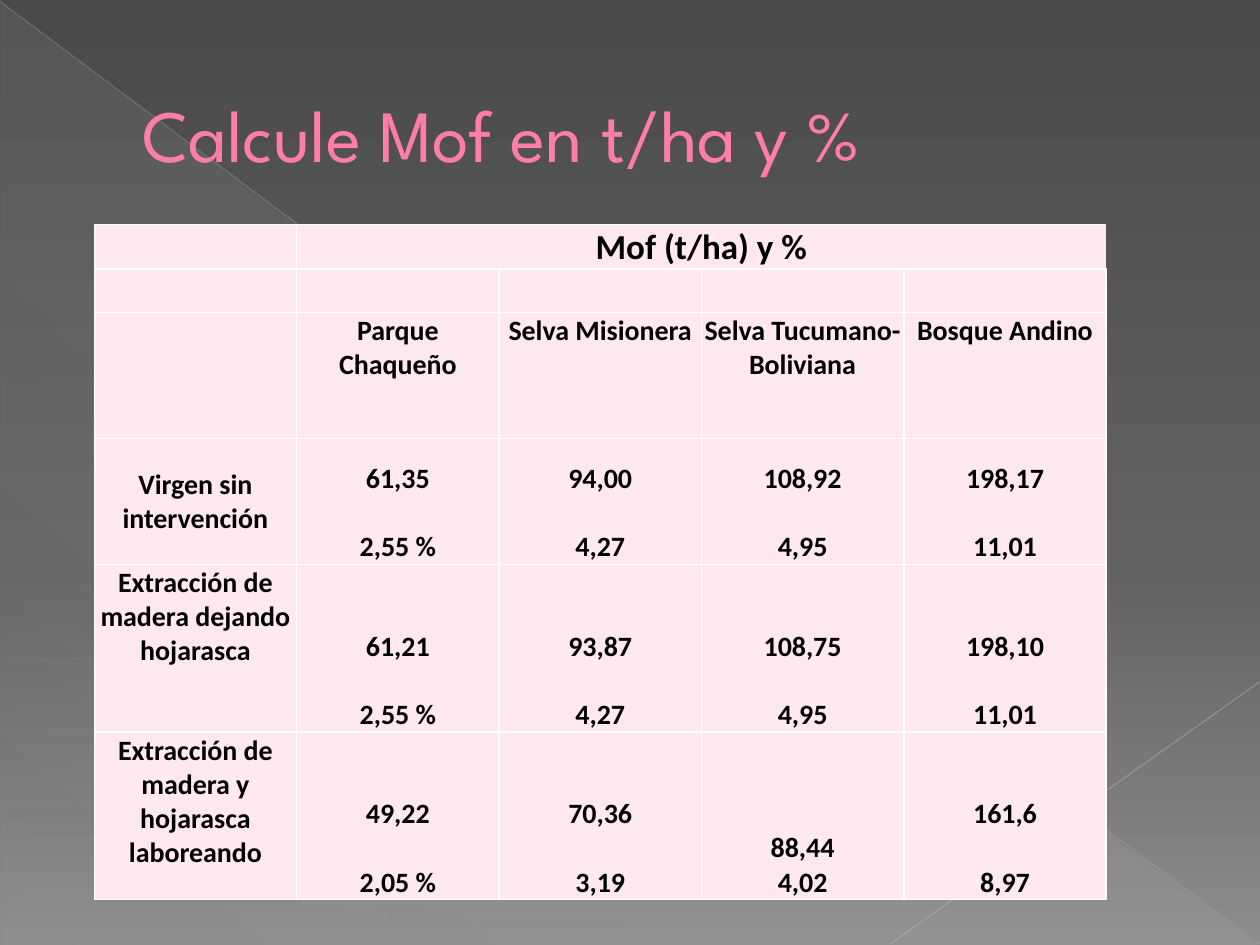
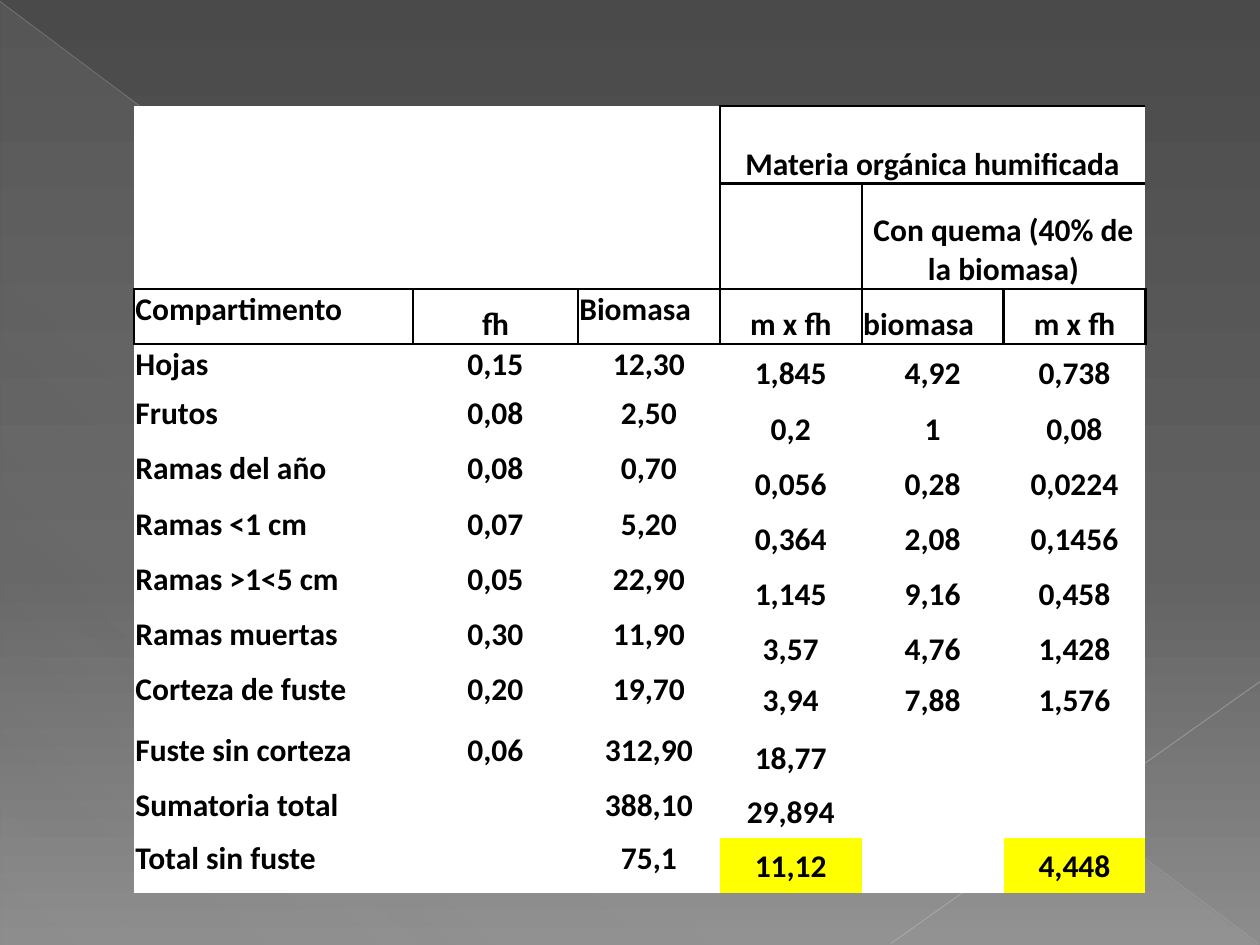
import lxml.etree
import pptx
import pptx.dml.color
import pptx.enum.shapes
import pptx.enum.text
import pptx.oxml.ns
import pptx.util

Cm = pptx.util.Cm
Pt = pptx.util.Pt
RGBColor = pptx.dml.color.RGBColor
Align = pptx.enum.text.PP_ALIGN
Anchor = pptx.enum.text.MSO_ANCHOR
qn = pptx.oxml.ns.qn

# Shared colours and fonts
BLACK = RGBColor(0x00, 0x00, 0x00)
WHITE = RGBColor(0xFF, 0xFF, 0xFF)
YELLOW = RGBColor(0xFF, 0xFF, 0x00)
PALE_PINK = RGBColor(0xFF, 0xE8, 0xEE)
TITLE_PINK = RGBColor(0xFF, 0x7D, 0xA7)
TITLE_OUTLINE = RGBColor(0xB1, 0x27, 0x61)
VEIL_GREY = RGBColor(0xD2, 0xD2, 0xD2)
DIAGONAL_GREY = RGBColor(0xBF, 0xBF, 0xBF)
CORNER_GREY = RGBColor(0xC6, 0xC6, 0xC6)
BACKGROUND_STOPS = [(0, RGBColor(0x4A, 0x4A, 0x4A), 100),
                    (60, RGBColor(0x62, 0x62, 0x62), 100),
                    (100, RGBColor(0x8C, 0x8C, 0x8C), 100)]
VEIL_STOPS = [(0, VEIL_GREY, 10), (70, VEIL_GREY, 8), (100, VEIL_GREY, 1)]
TITLE_FONT = "League Spartan"
TABLE_FONT = "Calibri"
PLAIN_TABLE_STYLE = "{2D5ABB26-0587-4C30-8999-92F81FD0307C}"

# Mof per forest and treatment
FORESTS = ["Parque Chaqueño", "Selva Misionera", "Selva Tucumano-Boliviana",
           "Bosque Andino"]
TREATMENTS = [
    ("Virgen sin intervención",
     ["61,35\n2,55 %", "94,00\n4,27", "108,92\n4,95", "198,17\n11,01"]),
    ("Extracción de madera dejando hojarasca",
     ["61,21\n2,55 %", "93,87\n4,27", "108,75\n4,95", "198,10\n11,01"]),
    ("Extracción de madera y hojarasca laboreando",
     ["49,22\n2,05 %", "70,36\n3,19", "88,44\n4,02", "161,6\n8,97"]),
]
TIGHT_CELL = (5, 3)

# Humified matter per tree compartment
COMPARTMENTS = [
    ["", "", "", "Materia orgánica humificada", "", ""],
    ["", "", "", "", "Con quema (40% de la biomasa)", ""],
    ["Compartimento", "fh", "Biomasa", "m x fh", "biomasa", "m x fh"],
    ["Hojas", "0,15", "12,30", "1,845", "4,92", "0,738"],
    ["Frutos", "0,08", "2,50", "0,2", "1", "0,08"],
    ["Ramas del año", "0,08", "0,70", "0,056", "0,28", "0,0224"],
    ["Ramas <1 cm", "0,07", "5,20", "0,364", "2,08", "0,1456"],
    ["Ramas >1<5 cm", "0,05", "22,90", "1,145", "9,16", "0,458"],
    ["Ramas muertas", "0,30", "11,90", "3,57", "4,76", "1,428"],
    ["Corteza de fuste", "0,20", "19,70", "3,94", "7,88", "1,576"],
    ["Fuste sin corteza", "0,06", "312,90", "18,77", "", ""],
    ["Sumatoria total", "", "388,10", "29,894", "", ""],
    ["Total sin fuste", "", "75,1", "11,12", "", "4,448"],
]
HEADER_ROW = 2
FIRST_MIDDLE_ROW = 9
HIGHLIGHTS = {(12, 3), (12, 5)}


# XML helpers
def add_child(parent, tag, **attributes):
    child = lxml.etree.SubElement(parent, qn(tag))
    for name, value in attributes.items():
        child.set(name, str(value))
    return child


def add_color(parent, color, opacity=100):
    node = add_child(parent, "a:srgbClr", val=color)
    if opacity < 100:
        add_child(node, "a:alpha", val=opacity * 1000)


def set_gradient(properties, stops, angle):
    """Replace the solid fill of the properties with a linear gradient."""
    gradient = add_child(properties, "a:gradFill", rotWithShape=1)
    stop_list = add_child(gradient, "a:gsLst")
    for position, color, opacity in stops:
        add_color(add_child(stop_list, "a:gs", pos=position * 1000), color, opacity)
    add_child(gradient, "a:lin", ang=angle * 60000, scaled=0)
    properties.replace(properties.find(qn("a:solidFill")), gradient)


def set_borders(cell, sides, color, width):
    properties = cell._tc.get_or_add_tcPr()
    for index, side in enumerate(side for side in "LRTB" if side in sides):
        line = add_child(properties, "a:ln" + side, w=int(Pt(width)))
        add_color(add_child(line, "a:solidFill"), color)
        properties.insert(index, line)


# Shared backdrop
def add_backdrop_line(slide, start, end, color, width, opacity):
    line = slide.shapes.add_connector(
        pptx.enum.shapes.MSO_CONNECTOR.STRAIGHT,
        Cm(start[0]), Cm(start[1]), Cm(end[0]), Cm(end[1]))
    line.line.color.rgb = color
    line.line.width = Pt(width)
    properties = line.element.spPr
    add_child(properties.find(".//" + qn("a:srgbClr")), "a:alpha", val=opacity * 1000)
    add_child(properties, "a:effectLst")
    return line


def build_backdrop(master, slide):
    """Draw the backdrop and move it behind the master's placeholders."""
    master.background.fill.solid()
    set_gradient(master.element.find(".//" + qn("p:bgPr")), BACKGROUND_STOPS, 90)

    veil = slide.shapes.add_shape(
        pptx.enum.shapes.MSO_SHAPE.RIGHT_TRIANGLE,
        Cm(0.02), Cm(0.04), Cm(25.35), Cm(19))
    veil.shadow.inherit = False
    veil.line.fill.background()
    veil.fill.solid()
    set_gradient(veil.element.spPr, VEIL_STOPS, 133)
    parts = [
        veil,
        add_backdrop_line(slide, (0, 0.03), (25.37, 19.02), DIAGONAL_GREY, 0.39, 35),
        add_backdrop_line(slide, (25.4, 13.74), (17.96, 19.02), CORNER_GREY, 0.47, 45),
    ]
    for index, part in enumerate(parts):
        part.element.find(".//" + qn("p:cNvPr")).set("id", str(100 + index))
        master.element.cSld.spTree.insert(2 + index, part.element)


# Title and tables
def build_title(slide, text, left, top, width, height):
    title = slide.shapes.title
    title.left, title.top, title.width, title.height = left, top, width, height
    frame = title.text_frame
    frame.text = text
    frame.margin_left = Cm(1.6)
    frame.vertical_anchor = Anchor.MIDDLE
    paragraph = frame.paragraphs[0]
    paragraph.alignment = Align.LEFT
    font = paragraph.runs[0].font
    font.name, font.size = TITLE_FONT, Pt(42)
    font.color.rgb = TITLE_PINK
    run_properties = paragraph.runs[0]._r.get_or_add_rPr()
    outline = add_child(run_properties, "a:ln", w=int(Pt(0.5)))
    add_color(add_child(outline, "a:solidFill"), TITLE_OUTLINE)
    run_properties.insert(0, outline)


def add_plain_table(slide, left, top, widths, heights):
    frame = slide.shapes.add_table(len(heights), len(widths), left, top,
                                   Cm(sum(widths)), Cm(sum(heights)))
    frame.element.find(".//" + qn("a:tableStyleId")).text = PLAIN_TABLE_STYLE
    table = frame.table
    table.first_row = table.horz_banding = False
    for column, width in zip(table.columns, widths):
        column.width = Cm(width)
    for row, height in zip(table.rows, heights):
        row.height = Cm(height)
    return table


def fill_cell(cell, text, size, fill, anchor=Anchor.TOP, alignment=Align.CENTER, gap=0):
    cell.margin_left = cell.margin_right = cell.margin_top = Cm(0.03)
    cell.margin_bottom = 0
    cell.vertical_anchor = anchor
    cell.fill.solid()
    cell.fill.fore_color.rgb = fill
    cell.text_frame.text = text
    for index, paragraph in enumerate(cell.text_frame.paragraphs):
        paragraph.alignment = alignment
        if index and gap:
            paragraph.space_before = Pt(gap)
        for run in paragraph.runs:
            run.font.name, run.font.size, run.font.bold = TABLE_FONT, Pt(size), True
            run.font.color.rgb = BLACK


def build_forest_table(slide, left, top):
    rows = [["", "Mof (t/ha) y %", "", "", ""], [""] * 5, [""] + FORESTS]
    rows += [[name] + values for name, values in TREATMENTS]
    table = add_plain_table(slide, left, top, [4.08] * 5,
                            [0.87, 0.87, 2.54, 2.54, 3.38, 3.38])
    for r, row in enumerate(rows):
        for c, text in enumerate(row):
            anchor = Anchor.TOP
            if r == 0 or (r > 2 and c > 0):
                anchor = Anchor.BOTTOM
            elif r == 3:
                anchor = Anchor.MIDDLE
            cell = table.cell(r, c)
            fill_cell(cell, text, 20 if r == 0 else 16, PALE_PINK, anchor,
                      gap=0 if (r, c) == TIGHT_CELL else 19.5)
            sides = "TB" if r == 0 and c > 1 else "LTB"
            set_borders(cell, sides + ("R" if c in (0, 4) else ""), WHITE, 1)
    table.cell(0, 1).merge(table.cell(0, 4))


def build_compartment_table(slide, left, top):
    heights = [1.57, 2.12, 1.11, 1] + [1.11] * 5 + [1.24, 1.11, 1.07, 1.11]
    table = add_plain_table(slide, left, top, [5.62, 3.33] + [2.86] * 4, heights)
    for r, row in enumerate(COMPARTMENTS):
        for c, text in enumerate(row):
            if c < 3:
                anchor = Anchor.BOTTOM if (r, c) == (HEADER_ROW, 1) else Anchor.TOP
            else:
                anchor = Anchor.BOTTOM if r < FIRST_MIDDLE_ROW else Anchor.MIDDLE
            left_aligned = c == 0 or text.lower() == "biomasa"
            fill_cell(table.cell(r, c), text, 18,
                      YELLOW if (r, c) in HIGHLIGHTS else WHITE, anchor,
                      Align.LEFT if left_aligned else Align.CENTER)

    # Header boxes: row, first column, last column
    boxes = [(0, 3, 5), (1, 3, 3), (1, 4, 5)] + [(HEADER_ROW, c, c) for c in range(6)]
    for r, first, last in boxes:
        for c in range(first, last + 1):
            sides = "TB" + ("L" if c == first else "") + ("R" if c == last else "")
            set_borders(table.cell(r, c), sides, BLACK, 1.5)
    for r, first, last in [(0, 3, 5), (1, 4, 5), (11, 0, 1)]:
        table.cell(r, first).merge(table.cell(r, last))


def main():
    presentation = pptx.Presentation()
    presentation.slide_width, presentation.slide_height = Cm(25.4), Cm(19.05)
    layouts = presentation.slide_layouts

    forest_slide = presentation.slides.add_slide(layouts.get_by_name("Title Only"))
    build_backdrop(presentation.slide_master, forest_slide)
    build_title(forest_slide, "Calcule Mof en t/ha y %",
                Cm(1.27), Cm(0.74), Cm(22.86), Cm(3.89))
    build_forest_table(forest_slide, Cm(1.9), Cm(4.53))

    compartment_slide = presentation.slides.add_slide(layouts.get_by_name("Blank"))
    build_compartment_table(compartment_slide, Cm(2.7), Cm(2.13))

    presentation.save("out.pptx")


if __name__ == "__main__":
    main()
